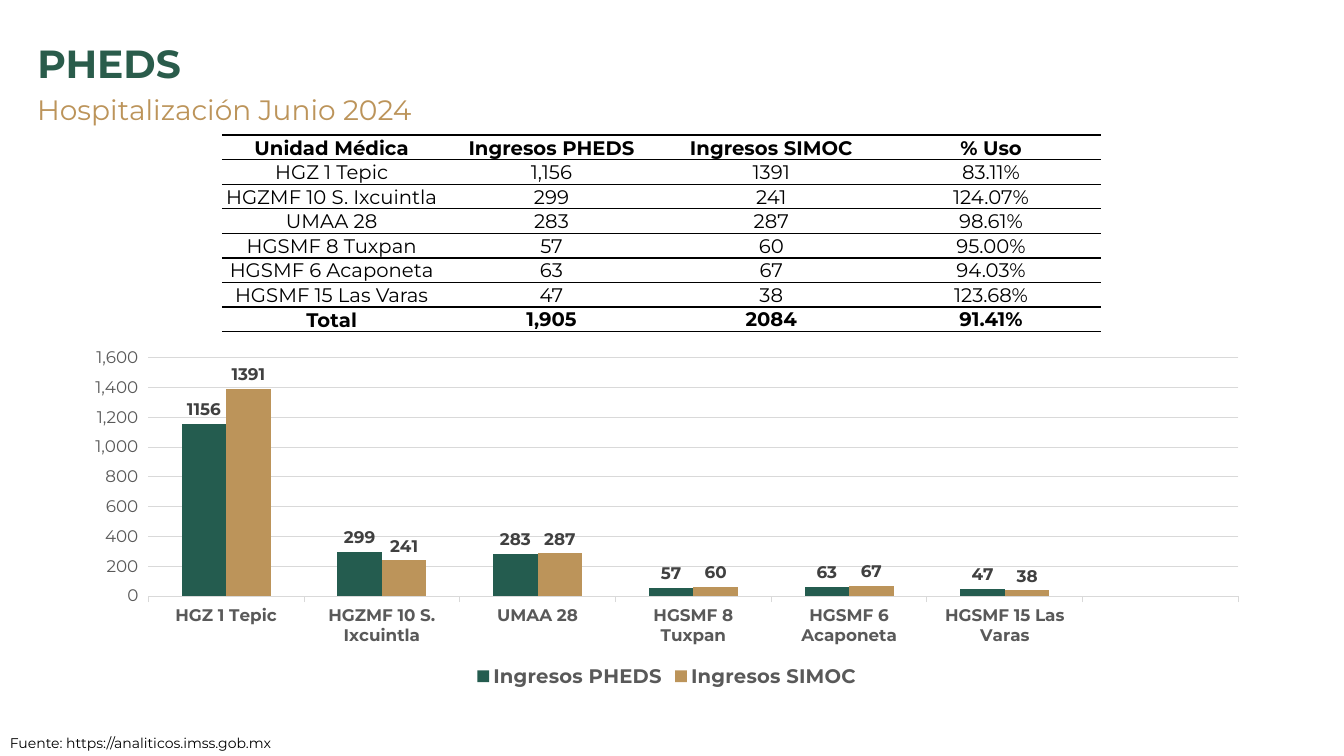
from dataclasses import dataclass

from lxml import etree
from pptx import Presentation
from pptx.chart.data import CategoryChartData
from pptx.dml.color import RGBColor
from pptx.enum.chart import XL_CHART_TYPE, XL_LABEL_POSITION, XL_LEGEND_POSITION, XL_TICK_MARK
from pptx.enum.text import MSO_ANCHOR, PP_ALIGN
from pptx.oxml.ns import qn
from pptx.util import Inches, Pt

COLUMN_CLUSTERED = XL_CHART_TYPE.COLUMN_CLUSTERED
OUTSIDE_END = XL_LABEL_POSITION.OUTSIDE_END
LEGEND_BOTTOM = XL_LEGEND_POSITION.BOTTOM
TICK_OUTSIDE = XL_TICK_MARK.OUTSIDE
TOP, MIDDLE, BOTTOM = MSO_ANCHOR.TOP, MSO_ANCHOR.MIDDLE, MSO_ANCHOR.BOTTOM
LEFT, CENTER = PP_ALIGN.LEFT, PP_ALIGN.CENTER


@dataclass(frozen=True)
class Theme:
    font: str = "Montserrat"
    heading: str = "2A5C4B"
    green: str = "245C4F"
    gold: str = "BC945A"
    black: str = "000000"
    axis: str = "595959"
    label: str = "404040"
    grid: str = "D9D9D9"
    title_size: int = 28
    subtitle_size: int = 20
    body_size: int = 14
    chart_size: int = 12
    source_size: int = 10


THEME = Theme()
HEADERS = ("Unidad Médica", "Ingresos PHEDS", "Ingresos SIMOC", "% Uso")
UNITS = (
    ("HGZ 1 Tepic", 1156, 1391, "83.11%"),
    ("HGZMF 10 S. Ixcuintla", 299, 241, "124.07%"),
    ("UMAA 28", 283, 287, "98.61%"),
    ("HGSMF 8 Tuxpan", 57, 60, "95.00%"),
    ("HGSMF 6 Acaponeta", 63, 67, "94.03%"),
    ("HGSMF 15 Las Varas", 47, 38, "123.68%"),
)
TOTAL = ("Total", 1905, 2084, "91.41%")


def format_font(font, size, color, bold=False):
    font.name = THEME.font
    font.size = Pt(size)
    font.bold = bold
    font.color.rgb = RGBColor.from_string(color)


def write_text(frame, text, size, color, bold=False, align=LEFT, anchor=TOP, spacing=None, wrap=True):
    frame.word_wrap = wrap
    frame.vertical_anchor = anchor
    paragraph = frame.paragraphs[0]
    paragraph.alignment = align
    paragraph.line_spacing = spacing
    run = paragraph.add_run()
    run.text = text
    format_font(run.font, size, color, bold)


def add_text_box(slide, box, text, **options):
    shape = slide.shapes.add_textbox(*map(Inches, box))
    write_text(shape.text_frame, text, **options)


def add_heading(slide, box):
    left, top, width, height = box
    title_height = 0.57
    title = slide.shapes.title
    title.left, title.top = Inches(left), Inches(top)
    title.width, title.height = Inches(width), Inches(title_height)
    write_text(title.text_frame, "PHEDS", size=THEME.title_size, color=THEME.heading, bold=True)
    add_text_box(slide, (left, top + title_height, width, height - title_height),
                 "Hospitalización Junio 2024", size=THEME.subtitle_size,
                 color=THEME.gold, spacing=0.9)


def set_row_borders(cell):
    properties = cell._tc.get_or_add_tcPr()
    for position, side in enumerate(("lnL", "lnR", "lnT", "lnB")):
        line = etree.Element(qn(f"a:{side}"), w=str(Pt(1)))
        if side in ("lnT", "lnB"):
            fill = etree.SubElement(line, qn("a:solidFill"))
            etree.SubElement(fill, qn("a:srgbClr"), val=THEME.black)
        else:
            etree.SubElement(line, qn("a:noFill"))
        properties.insert(position, line)


def add_units_table(slide, box):
    rows = (HEADERS, *UNITS, TOTAL)
    left, top, width, height = map(Inches, box)
    table = slide.shapes.add_table(len(rows), len(HEADERS), left, top, width, height).table
    table.first_row = table.horz_banding = False
    last = len(rows) - 1
    for row_index, values in enumerate(rows):
        for column_index, value in enumerate(values):
            cell = table.cell(row_index, column_index)
            cell.fill.background()
            set_row_borders(cell)
            cell.margin_left = cell.margin_right = cell.margin_top = Inches(0.01)
            cell.margin_bottom = 0
            text = f"{value:,}" if column_index == 1 and row_index else str(value)
            write_text(cell.text_frame, text, size=THEME.body_size, color=THEME.black,
                       bold=row_index in (0, last), align=CENTER)
            cell.vertical_anchor = BOTTOM if row_index == last and column_index else MIDDLE


def format_axes(chart):
    for axis, bold in ((chart.category_axis, True), (chart.value_axis, False)):
        format_font(axis.tick_labels.font, THEME.chart_size, THEME.axis, bold)
        axis.major_tick_mark = TICK_OUTSIDE
    values = chart.value_axis
    values.minimum_scale, values.maximum_scale, values.major_unit = 0, 1600, 200
    values.tick_labels.number_format = "#,##0"
    values.tick_labels.number_format_is_linked = False
    values.format.line.fill.background()
    for line in (chart.category_axis.format.line, values.major_gridlines.format.line):
        line.color.rgb = RGBColor.from_string(THEME.grid)
        line.width = Pt(0.75)


def add_admissions_chart(slide, box):
    data = CategoryChartData(number_format="General")
    data.categories = [unit[0] for unit in UNITS] + [""]
    for column in (1, 2):
        data.add_series(HEADERS[column], [unit[column] for unit in UNITS] + [None])
    chart = slide.shapes.add_chart(COLUMN_CLUSTERED, *map(Inches, box), data).chart
    format_font(chart.font, THEME.source_size, THEME.black)
    chart.has_title = False
    chart.has_legend = True
    chart.legend.position = LEGEND_BOTTOM
    chart.legend.include_in_layout = False
    format_font(chart.legend.font, THEME.body_size, THEME.axis, bold=True)
    format_axes(chart)
    plot = chart.plots[0]
    plot.gap_width, plot.overlap = 150, 0
    plot.vary_by_categories = False
    for series, color in zip(plot.series, (THEME.green, THEME.gold)):
        series.format.fill.solid()
        series.format.fill.fore_color.rgb = RGBColor.from_string(color)
        labels = series.data_labels
        labels.show_value = True
        labels.position = OUTSIDE_END
        format_font(labels.font, THEME.chart_size, THEME.label, bold=True)


def add_source(slide, box):
    add_text_box(slide, box, "Fuente: https://analiticos.imss.gob.mx",
                 size=THEME.source_size, color=THEME.black, wrap=False)


def main():
    presentation = Presentation()
    presentation.slide_width, presentation.slide_height = Inches(13.33), Inches(7.5)
    slide = presentation.slides.add_slide(presentation.slide_layouts[5])
    add_heading(slide, (0.27, 0.34, 12.96, 1.06))
    add_source(slide, (0, 7.24, 2.92, 0.27))
    add_units_table(slide, (2.2, 1.34, 8.72, 1.95))
    add_admissions_chart(slide, (0.71, 3.38, 11.81, 3.49))
    presentation.save("out.pptx")


if __name__ == "__main__":
    main()
